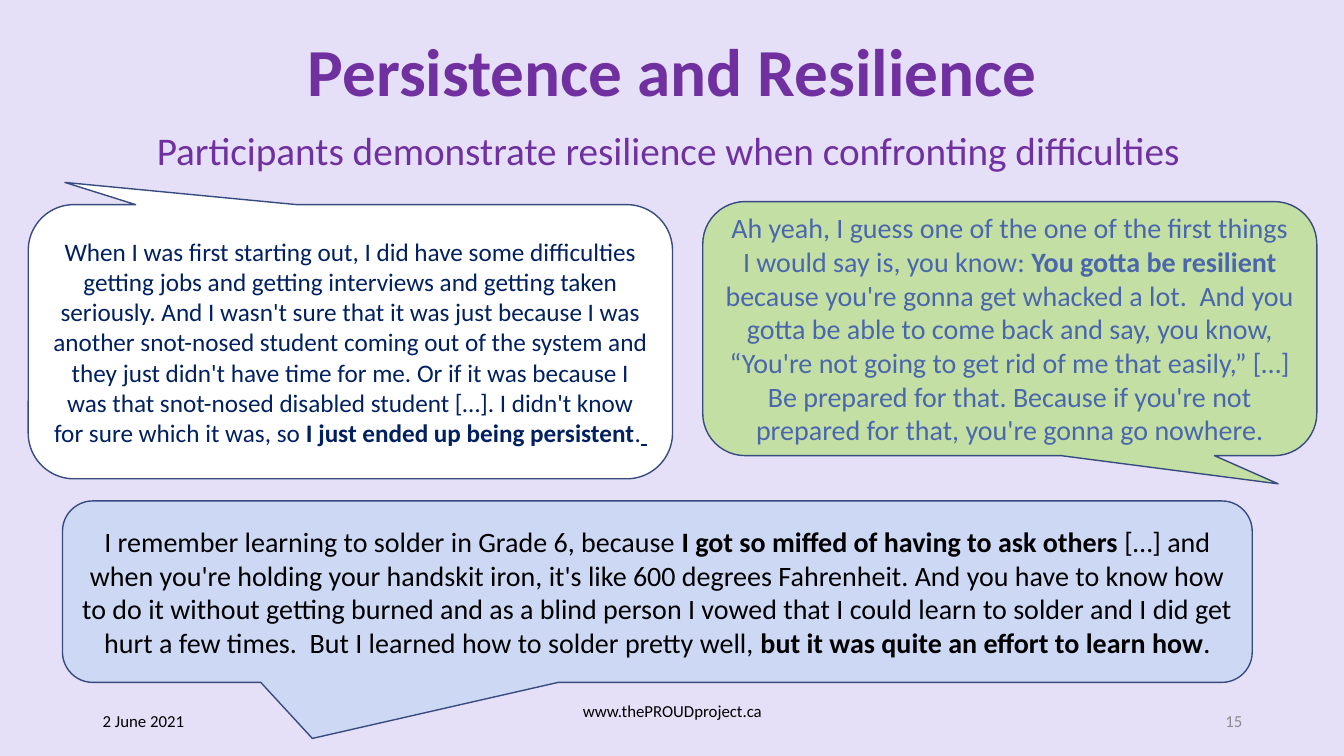
from dataclasses import dataclass

from lxml.etree import SubElement
from pptx import Presentation
from pptx.dml.color import RGBColor
from pptx.enum.shapes import MSO_SHAPE
from pptx.enum.text import MSO_ANCHOR, MSO_AUTO_SIZE, PP_ALIGN
from pptx.oxml.ns import qn
from pptx.slide import Slide
from pptx.text.text import TextFrame
from pptx.util import Pt

EMU_PER_PX = 9144  # 100 px to the inch

LAVENDER = RGBColor(0xE5, 0xE0, 0xF8)
PURPLE = RGBColor(0x70, 0x30, 0xA0)
NAVY = RGBColor(0x00, 0x20, 0x60)
BLUE = RGBColor(0x4A, 0x66, 0xAC)
OUTLINE = RGBColor(0x37, 0x4B, 0x7F)
GREEN = RGBColor(0x91, 0xDE, 0x26)
SKY = RGBColor(0xA9, 0xCC, 0xEE)
WHITE = RGBColor(0xFF, 0xFF, 0xFF)
BLACK = RGBColor(0x00, 0x00, 0x00)
GREY = RGBColor(0x8C, 0x8C, 0x8C)

Box = tuple[int, int, int, int]


@dataclass(frozen=True)
class Run:
    text: str
    bold: bool = False
    underline: bool = False


@dataclass(frozen=True)
class Style:
    size: int
    color: RGBColor
    align: PP_ALIGN = PP_ALIGN.CENTER
    anchor: MSO_ANCHOR = MSO_ANCHOR.MIDDLE
    line_spacing: float = 1.0


@dataclass(frozen=True)
class Callout:
    box: Box
    tail: tuple[float, float]
    fill: RGBColor
    opacity: int
    style: Style
    runs: tuple[Run, ...]


@dataclass(frozen=True)
class Label:
    box: Box
    text: str
    style: Style


CALLOUTS = (
    Callout((28, 203, 639, 272), (-0.443, -0.581), WHITE, 100, Style(18, NAVY), (
        Run("When I was first starting out, I did have some difficulties getting jobs and "
            "getting interviews and getting taken seriously. And I wasn't sure that it was "
            "just because I was another snot-nosed student coming out of the system and they "
            "just didn't have time for me. Or if it was because I was that snot-nosed "
            "disabled student […]. I didn't know for sure which it was, so "),
        Run("I just ended up being persistent", bold=True),
        Run("."),
        Run(" ", underline=True),
    )),
    Callout((697, 200, 609, 252), (0.437, 0.611), GREEN, 40, Style(20, BLUE), (
        Run("Ah yeah, I guess one of the one of the first things I would say is, you know: "),
        Run("You gotta be resilient ", bold=True),
        Run("because you're gonna get whacked a lot.  And you gotta be able to come back and "
            "say, you know, “You're not going to get rid of me that easily,” […] Be prepared "
            "for that. Because if you're not prepared for that, you're gonna go nowhere."),
    )),
    Callout((62, 497, 1180, 180), (-0.29, 0.809), SKY, 39, Style(20, BLACK), (
        Run("I remember learning to solder in Grade 6, because "),
        Run("I got so miffed of having to ask others ", bold=True),
        Run("[…] and when you're holding your handskit iron, it's like 600 degrees "
            "Fahrenheit. And you have to know how to do it without getting burned and as a "
            "blind person I vowed that I could learn to solder and I did get hurt a few "
            "times.  But I learned how to solder pretty well, "),
        Run("but it was quite an effort to learn how", bold=True),
        Run("."),
    )),
)

FOOTERS = (
    Label((92, 695, 300, 40), "2 June 2021", Style(12, BLACK, PP_ALIGN.LEFT)),
    Label((442, 685, 450, 40), "www.thePROUDproject.ca", Style(12, BLACK)),
    Label((942, 695, 300, 40), "15", Style(12, GREY, PP_ALIGN.RIGHT)),
)


def px(length: int) -> int:
    return length * EMU_PER_PX


def apply(target: object, formats: dict[str, object]) -> None:
    for name, value in formats.items():
        setattr(target, name, value)


def write(frame: TextFrame, runs: tuple[Run, ...], style: Style) -> None:
    apply(frame, {"word_wrap": True, "auto_size": MSO_AUTO_SIZE.NONE,
                  "vertical_anchor": style.anchor})
    paragraph = frame.paragraphs[0]
    apply(paragraph, {"alignment": style.align, "line_spacing": style.line_spacing,
                      "space_before": Pt(0)})
    for part in runs:
        run = paragraph.add_run()
        run.text = part.text
        apply(run.font, {"name": "Calibri", "size": Pt(style.size),
                         "bold": part.bold, "underline": part.underline})
        run.font.color.rgb = style.color


def fill_placeholder(slide: Slide, index: int, box: Box, run: Run, style: Style) -> None:
    shape = slide.placeholders[index]
    apply(shape, dict(zip(("left", "top", "width", "height"), map(px, box))))
    properties = shape.text_frame.paragraphs[0]._p.get_or_add_pPr()
    properties.set("marL", "0")
    properties.set("indent", "0")
    SubElement(properties, qn("a:buNone"))
    write(shape.text_frame, (run,), style)


def add_callout(slide: Slide, callout: Callout) -> None:
    shape = slide.shapes.add_shape(MSO_SHAPE.ROUNDED_RECTANGULAR_CALLOUT,
                                   *map(px, callout.box))
    shape.shadow.inherit = False
    for index, value in enumerate((*callout.tail, 0.167)):
        shape.adjustments[index] = value
    shape.fill.solid()
    shape.fill.fore_color.rgb = callout.fill
    if callout.opacity < 100:
        color = shape._element.spPr.find(qn("a:solidFill")).find(qn("a:srgbClr"))
        SubElement(color, qn("a:alpha"), val=str(callout.opacity * 1000))
    shape.line.color.rgb = OUTLINE
    shape.line.width = Pt(1)
    write(shape.text_frame, callout.runs, callout.style)


def add_label(slide: Slide, label: Label) -> None:
    shape = slide.shapes.add_textbox(*map(px, label.box))
    write(shape.text_frame, (Run(label.text),), label.style)


def main() -> None:
    presentation = Presentation()
    apply(presentation, {"slide_width": px(1333), "slide_height": px(750)})
    slide = presentation.slides.add_slide(presentation.slide_layouts[1])
    slide.background.fill.solid()
    slide.background.fill.fore_color.rgb = LAVENDER

    fill_placeholder(slide, 0, (92, 23, 1150, 102),
                     Run("Persistence and Resilience", bold=True),
                     Style(48, PURPLE, line_spacing=0.9))
    fill_placeholder(slide, 1, (92, 126, 1150, 55),
                     Run("Participants demonstrate resilience when confronting difficulties "),
                     Style(28, PURPLE, anchor=MSO_ANCHOR.TOP, line_spacing=0.9))
    for callout in CALLOUTS:
        add_callout(slide, callout)
    for label in FOOTERS:
        add_label(slide, label)
    presentation.save("out.pptx")


if __name__ == "__main__":
    main()
